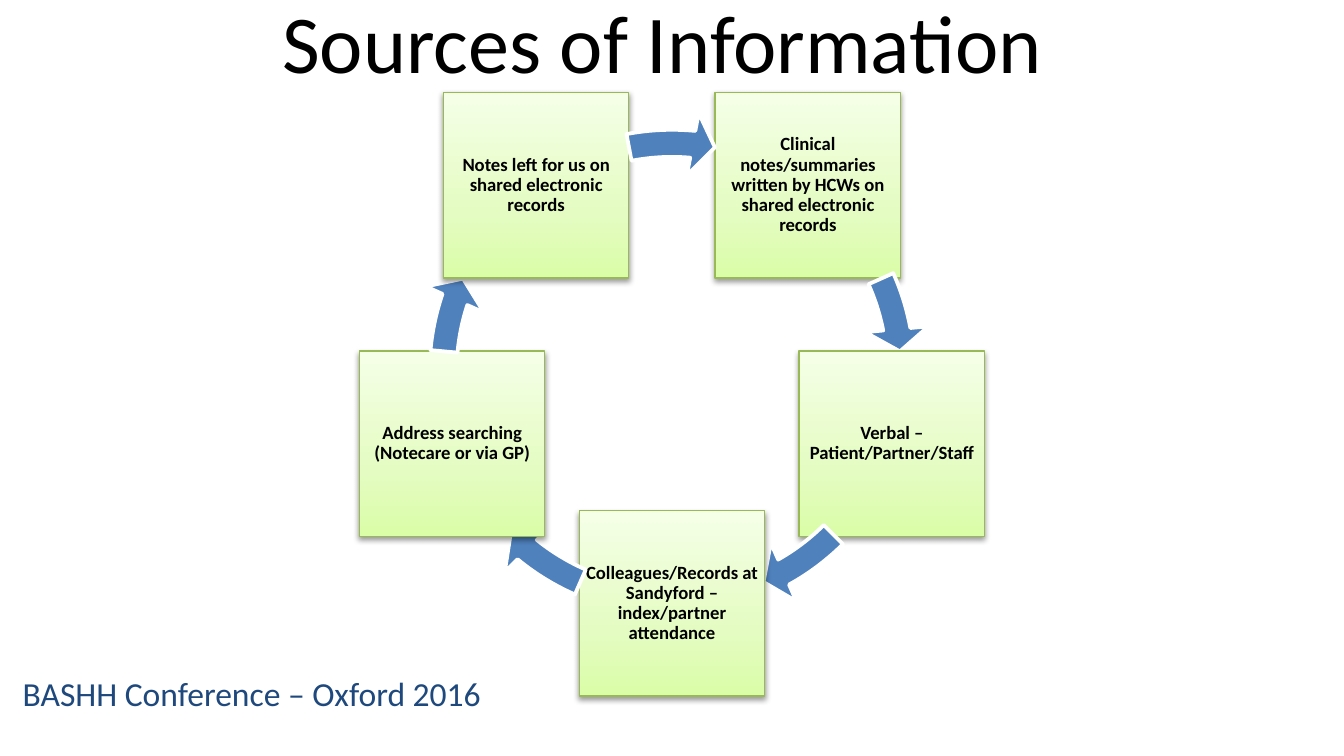
import math
from lxml import etree
from pptx import Presentation
from pptx import util as u
from pptx.dml.color import RGBColor
from pptx.enum import shapes, text
from pptx.oxml import ns

COLORS = {
    "ink": "000000", "footer": "1F497D", "arrow": "4F81BD", "white": "FFFFFF",
    "border": "98B955", "deep": "DAFDA7", "mid": "E4FCC2", "pale": "F5FFE7",
}
GRADIENT = [(0, "deep"), (35, "mid"), (100, "pale")]
TITLE = "Sources of Information"
FOOTER = "BASHH Conference – Oxford 2016"
SOURCES = [
    ("Clinical notes/summaries written by HCWs on shared electronic records", 335.87, 349.17),
    ("Verbal – Patient/Partner/Staff", 45.17, 60.81),
    ("Colleagues/Records at Sandyford – index/partner attendance", 113.59, 129.23),
    ("Address searching (Notecare or via GP)", 185.23, 198.53),
    ("Notes left for us on shared electronic records", 259.19, 275.22),
]
CENTER_X, CENTER_Y, RADIUS = 5, 2.77, 1.72
CARD, RING = 1.38, 3.88
FIRST_ANGLE = -54
DEGREE = 60000 / 100000


def color(name):
    return RGBColor.from_string(COLORS[name])


def square(x, y, side):
    return [u.Inches(v) for v in (x - side / 2, y - side / 2, side, side)]


def write(shape, words, size, tint="ink", bold=False, align=text.PP_ALIGN.CENTER,
          anchor=text.MSO_ANCHOR.MIDDLE, inset=None, spacing=None):
    frame = shape.text_frame
    frame.word_wrap = True
    frame.vertical_anchor = anchor
    if inset is not None:
        frame.margin_left = frame.margin_right = u.Inches(inset)
        frame.margin_top = frame.margin_bottom = u.Inches(inset)
    para = frame.paragraphs[0]
    para.alignment = align
    para.line_spacing = spacing
    span = para.add_run()
    span.text = words
    span.font.name = "Calibri"
    span.font.size = u.Pt(size)
    span.font.bold = bold
    span.font.color.rgb = color(tint)


def add_child(parent, tag, **attributes):
    return etree.SubElement(parent, ns.qn(tag), attributes)


def add_card(page, x, y, words):
    card = page.shapes.add_shape(shapes.MSO_SHAPE.RECTANGLE, *square(x, y, CARD))
    card.line.color.rgb = color("border")
    card.line.width = u.Pt(0.75)
    card.fill.gradient()
    card.fill.gradient_angle = 90
    stops = card._element.spPr.find(".//" + ns.qn("a:gsLst"))
    for stop in list(stops):
        stops.remove(stop)
    for percent, name in GRADIENT:
        stop = add_child(stops, "a:gs", pos=str(percent * 1000))
        add_child(stop, "a:srgbClr", val=COLORS[name])
    card.shadow.inherit = False
    effects = card._element.spPr.find(ns.qn("a:effectLst"))
    shadow = add_child(effects, "a:outerShdw", blurRad=str(u.Pt(3.1)), dist=str(u.Pt(1.6)),
                       dir="5400000", rotWithShape="0")
    tone = add_child(shadow, "a:srgbClr", val=COLORS["ink"])
    add_child(tone, "a:alpha", val="38000")
    write(card, words, 10, bold=True, inset=0.01, spacing=0.9)


def add_arrow(page, start, end):
    arrow = page.shapes.add_shape(shapes.MSO_SHAPE.CIRCULAR_ARROW,
                                  *square(CENTER_X, CENTER_Y, RING))
    for index, value in enumerate((0.052, 5.6 * DEGREE, end * DEGREE, start * DEGREE, 0.061)):
        arrow.adjustments[index] = value
    arrow.shadow.inherit = False
    arrow.fill.solid()
    arrow.fill.fore_color.rgb = color("arrow")
    arrow.line.color.rgb = color("white")
    arrow.line.width = u.Pt(2)


def main():
    deck = Presentation()
    deck.slide_width = u.Inches(10)
    deck.slide_height = deck.slide_width * 9 // 16
    page = deck.slides.add_slide(deck.slide_layouts[6])

    footer = page.shapes.add_textbox(*map(u.Inches, (0.07, 4.96, 4.78, 0.69)))
    write(footer, FOOTER, 18, tint="footer", align=text.PP_ALIGN.LEFT,
          anchor=text.MSO_ANCHOR.TOP)
    title = page.shapes.add_textbox(*map(u.Inches, (0.43, 0, 9, 0.61)))
    write(title, TITLE, 44)

    step = 360 / len(SOURCES)
    for index, (words, start, end) in enumerate(SOURCES):
        angle = math.radians(FIRST_ANGLE + index * step)
        add_card(page, CENTER_X + RADIUS * math.cos(angle),
                 CENTER_Y + RADIUS * math.sin(angle), words)
        add_arrow(page, start, end)
    deck.save("out.pptx")


if __name__ == "__main__":
    main()
